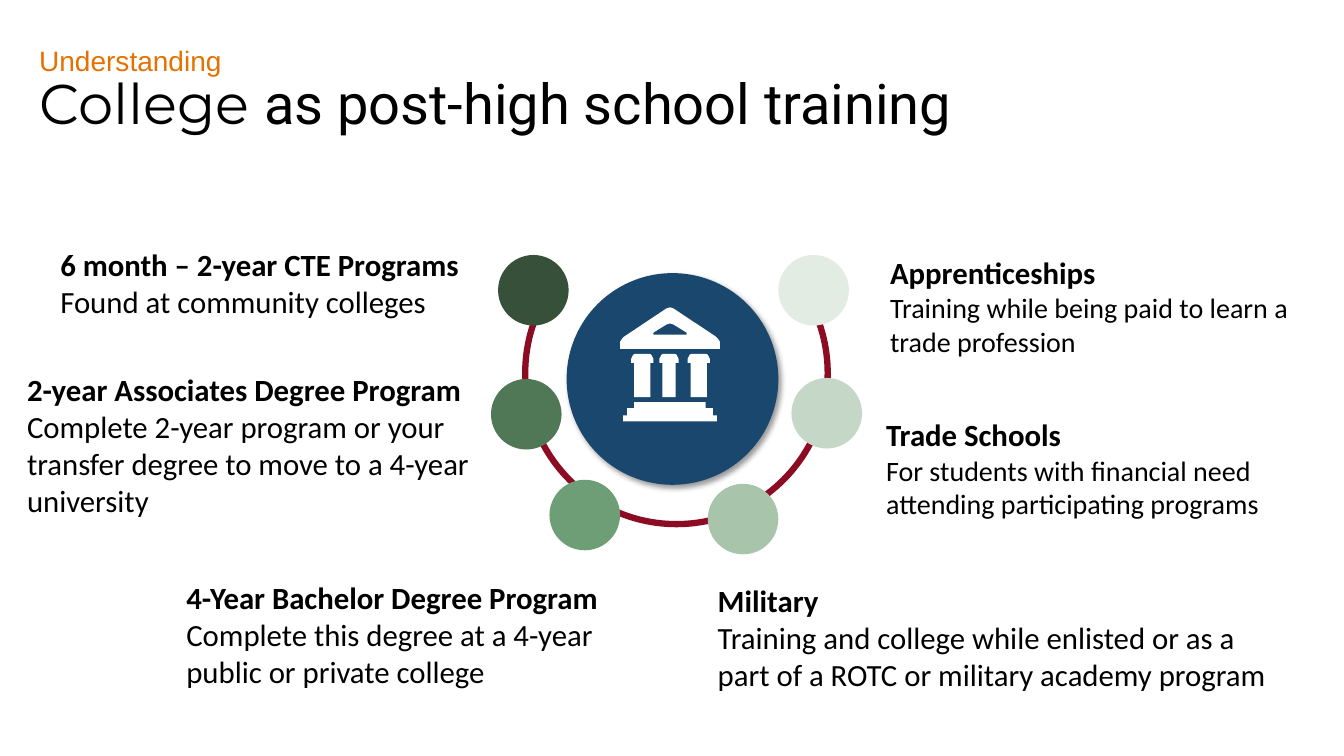
from dataclasses import dataclass

from lxml import etree
from pptx import Presentation
from pptx.dml.color import RGBColor
from pptx.enum.shapes import MSO_SHAPE
from pptx.enum.text import MSO_ANCHOR, MSO_AUTO_SIZE, PP_ALIGN
from pptx.oxml.ns import qn
from pptx.util import Inches, Pt

OVAL, ARC = MSO_SHAPE.OVAL, MSO_SHAPE.ARC
TOP, LEFT = MSO_ANCHOR.TOP, PP_ALIGN.LEFT
FIT, NO_FIT = MSO_AUTO_SIZE.SHAPE_TO_FIT_TEXT, MSO_AUTO_SIZE.NONE


@dataclass(frozen=True)
class Theme:
    ink: str = "000000"
    kicker: str = "E57200"
    hub: str = "1A476E"
    ring: str = "8B0C23"
    icon: str = "FFFFFF"
    title_size: int = 40
    heading_size: int = 22
    small_size: int = 20


theme = Theme()


def write(p, text, font, size, color=theme.ink, bold=False):
    r = p.add_run()
    r.text = text
    for name, value in dict(name=font, size=Pt(size), bold=bold).items():
        setattr(r.font, name, value)
    r.font.color.rgb = RGBColor.from_string(color)


def mirror(left, right, profile):
    """Close a symmetric outline from (inset, y) points of its left side."""
    return ([(left + inset, y) for inset, y in profile]
            + [(right - inset, y) for inset, y in reversed(profile)])


prs = Presentation()
prs.slide_width, prs.slide_height = Inches(13.33), Inches(7.5)
s = prs.slides.add_slide(prs.slide_layouts[5])

# Heading
tf = s.shapes.add_textbox(Inches(0.29), Inches(0.38), Inches(9.66), Inches(0.44)).text_frame
tf.word_wrap, tf.auto_size = True, FIT
write(tf.paragraphs[0], "Understanding", "Arial", theme.small_size, theme.kicker)

title = s.shapes.title
title.left, title.top = Inches(0.29), Inches(0.63)
title.width, title.height = Inches(10.7), Inches(0.77)
tf = title.text_frame
tf.word_wrap, tf.auto_size, tf.vertical_anchor = True, NO_FIT, TOP
p = tf.paragraphs[0]
p.alignment = LEFT
write(p, "College ", "Montserrat", theme.title_size)
write(p, "as post-high school training", "Roboto", theme.title_size)

# Hub and ring
hub = s.shapes.add_shape(OVAL, Inches(5.62), Inches(2.71), Inches(2.1), Inches(2.1))
hub.fill.solid()
hub.fill.fore_color.rgb = RGBColor.from_string(theme.hub)
hub.line.fill.background()
hub.shadow.inherit = False
effects = hub.element.spPr.find(qn("a:effectLst"))
shadow = etree.SubElement(effects, qn("a:outerShdw"), blurRad=str(Pt(4)),
                          dist=str(Pt(3)), dir=str(45 * 60000), algn="tl", rotWithShape="0")
black = etree.SubElement(shadow, qn("a:srgbClr"), val="000000")
etree.SubElement(black, qn("a:alpha"), val="40000")

ring = s.shapes.add_shape(ARC, Inches(5.21), Inches(2.2), Inches(3), Inches(3))
for i, degrees in enumerate((327.93, 213.4)):
    ring.adjustments[i] = degrees * 0.6
ring.fill.background()
ring.line.color.rgb = RGBColor.from_string(theme.ring)
ring.line.width = Pt(4.5)
ring.shadow.inherit = False

# Training options: dot (left, top, colour), text box, heading, body, body size
options = [
    ((7.72, 2.53, "E2ECE3"), (8.73, 2.47, 4.21, 1.14), "Apprenticeships",
     "Training while being paid to learn a trade profession", theme.small_size),
    ((7.85, 3.75, "C5D8C8"), (8.69, 4.08, 4.21, 1.14), "Trade Schools",
     "For students with financial need attending participating programs", theme.small_size),
    ((7.02, 4.8, "A8C5AC"), (7.02, 5.72, 5.72, 1.21), "Military",
     "Training and college while enlisted or as a part of a ROTC or military academy program",
     theme.heading_size),
    ((5.45, 4.76, "6E9E75"), (1.75, 5.69, 4.56, 1.21), "4-Year Bachelor Degree Program",
     "Complete this degree at a 4-year public or private college", theme.heading_size),
    ((4.87, 3.76, "517856"), (0.17, 3.63, 4.7, 1.58), "2-year Associates Degree Program",
     "Complete 2-year program or your transfer degree to move to a 4-year university",
     theme.heading_size),
    ((4.94, 2.53, "36503A"), (0.5, 2.39, 4.21, 0.84), "6 month – 2-year CTE Programs",
     "Found at community colleges", theme.heading_size),
]
for (x, y, color), box, heading, body, body_size in options:
    dot = s.shapes.add_shape(OVAL, Inches(x), Inches(y), Inches(0.7), Inches(0.7))
    dot.fill.solid()
    dot.fill.fore_color.rgb = RGBColor.from_string(color)
    dot.line.fill.background()
    dot.shadow.inherit = False

    tf = s.shapes.add_textbox(*map(Inches, box)).text_frame
    tf.word_wrap, tf.auto_size = True, FIT
    write(tf.paragraphs[0], heading, "Calibri", theme.heading_size, bold=True)
    write(tf.add_paragraph(), body, "Calibri", body_size)

# College building, in hundredths of an inch
steps = [(0, 418), (0, 412), (4, 412), (4, 405), (11, 405), (11, 399)]
column = [(3, 394), (3, 360), (0, 360), (0, 356), (1, 354), (2, 352), (4, 351)]
roof = [(0, 346), (0, 339), (2, 336), (4, 334), (46, 306), (49, 305)]
gable = [(16, 321), (13, 322), (0, 330), (0, 332), (1, 332)]
building = [[mirror(618, 711, steps)]]
building += [[mirror(left, right, column)]
             for left, right in ((626, 648), (654, 673), (682, 704))]
building.append([mirror(615, 714, roof), mirror(648, 681, gable)])

for outlines in building:
    builder = s.shapes.build_freeform(*outlines[0][0], scale=Inches(0.01))
    builder.add_line_segments(outlines[0][1:])
    for hole in outlines[1:]:
        builder.move_to(*hole[0])
        builder.add_line_segments(hole[1:])
    sp = builder.convert_to_shape()
    sp.fill.solid()
    sp.fill.fore_color.rgb = RGBColor.from_string(theme.icon)
    sp.line.fill.background()
    sp.shadow.inherit = False

prs.save("out.pptx")
